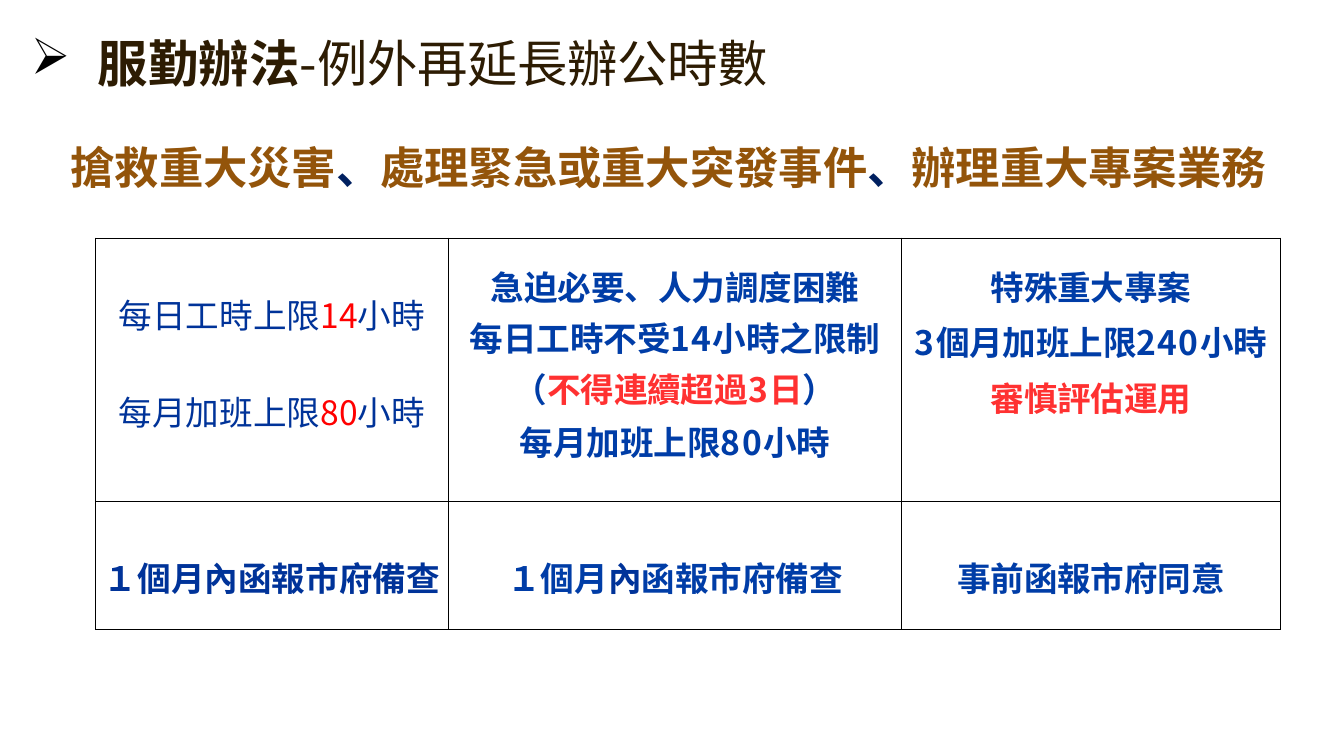
from typing import NamedTuple

from lxml.etree import SubElement
from pptx import Presentation
from pptx.dml.color import RGBColor
from pptx.enum.text import MSO_ANCHOR as Anchor, MSO_AUTO_SIZE as AutoSize, PP_ALIGN as Align
from pptx.oxml.ns import qn
from pptx.util import Inches, Pt

COLORS = {
    "brown": "93540A", "dark_brown": "2D1C03", "navy": "002060",
    "blue": "003399", "bright_blue": "003DA7",
    "red": "FF0000", "light_red": "FF3131", "black": "000000",
}
FONT_SC = "Noto Sans CJK SC"
FONT_TC = "Noto Sans CJK TC"
TABLE_SIZE = 36


class Piece(NamedTuple):
    text: str
    color: str
    spacing: float = 0  # points between characters
    bold: bool = True


class Line(NamedTuple):
    pieces: list[Piece]
    before: float = 0
    height: float | None = None  # exact line height in points


class CellText(NamedTuple):
    top: float  # top margin in inches
    lines: list[Line]


def fill_paragraph(paragraph, pieces: list[Piece], size: float, font_name: str) -> None:
    paragraph.font.size = Pt(size)
    paragraph.font.name = font_name
    for piece in pieces:
        run = paragraph.add_run()
        run.text = piece.text
        run.font.bold = piece.bold
        run.font.color.rgb = RGBColor.from_string(COLORS[piece.color])
        properties = run.font._element
        properties.set("spc", str(round(piece.spacing * 100)))
        SubElement(properties, qn("a:ea"), typeface=font_name)


def add_bullet(paragraph, character: str, indent: float) -> None:
    properties = paragraph._p.get_or_add_pPr()
    properties.set("marL", str(Inches(indent)))
    properties.set("indent", str(-Inches(1)))
    color = SubElement(properties, qn("a:buClr"))
    SubElement(color, qn("a:srgbClr"), val=COLORS["black"])
    SubElement(properties, qn("a:buChar"), char=character)
    tabs = SubElement(properties, qn("a:tabLst"))
    SubElement(tabs, qn("a:tab"), pos=str(Inches(indent)), algn="l")


def add_borders(cell) -> None:
    properties = cell._tc.get_or_add_tcPr()
    for position, side in enumerate(("lnL", "lnR", "lnT", "lnB")):
        line = SubElement(properties, qn(f"a:{side}"), w=str(Pt(1)))
        fill = SubElement(line, qn("a:solidFill"))
        SubElement(fill, qn("a:srgbClr"), val=COLORS["black"])
        properties.insert(position, line)


def fill_cell(cell, content: CellText) -> None:
    cell.fill.background()
    add_borders(cell)
    cell.margin_top = Inches(content.top)
    for index, line in enumerate(content.lines):
        frame = cell.text_frame
        paragraph = frame.add_paragraph() if index else frame.paragraphs[0]
        paragraph.alignment = Align.CENTER
        if line.before:
            paragraph.space_before = Pt(line.before)
        if line.height:
            paragraph.line_spacing = Pt(line.height)
        fill_paragraph(paragraph, line.pieces, TABLE_SIZE, FONT_SC)


def hour_limit(label: str, hours: str, before: float = 0) -> Line:
    return Line([Piece(label, "blue", bold=False), Piece(hours, "red", bold=False),
                 Piece("小時", "blue", bold=False)], before)


def blue(text: str, spacing: float = -0.1) -> Piece:
    return Piece(text, "bright_blue", spacing)


def red(text: str, spacing: float = -0.2) -> Piece:
    return Piece(text, "light_red", spacing)


ROWS = [
    [
        CellText(0.77, [hour_limit("每日工時上限", "14"),
                        hour_limit("每月加班上限", "80", before=52)]),
        CellText(0.56, [
            Line([blue("急迫必要、人力調度"), blue("困難", -0.3)], height=37),
            Line([blue("每日工時不受"), blue("14", 1.4), blue("小時", -0.3), blue("之限制")],
                 2.9, 51.8),
            Line([blue("（"), red("不得連續超"), red("過", -0.1), red("3", 1.4),
                  red("日", 0), blue("）", -0.5)], 2.9, 51.8),
            Line([blue("每月加班上限"), blue("80", 1.4), blue("小時", -0.3)], 4.3),
        ]),
        CellText(0.56, [
            Line([blue("特殊重大專案", -0.2)], height=37),
            Line([blue("3", 1.4), blue("個月加班上限", -0.2), blue("240", 1.4),
                  blue("小時", -0.3)], 7.3),
            Line([red("審慎評估運用")], 7.3),
        ]),
    ],
    [
        CellText(0.77, [Line([Piece("１個月內函報市府備查", "blue")])]),
        CellText(0.77, [Line([blue("１個月"), Piece("內", "blue"), blue("函報市府備查")])]),
        CellText(0.77, [Line([blue("事前函報市府同意", -0.2)])]),
    ],
]
COLUMN_WIDTHS = [5.25, 6.75, 5.63]
ROW_HEIGHTS = [3.92, 1.9]

presentation = Presentation()
presentation.slide_width = Inches(20)
presentation.slide_height = Inches(11.25)
slide = presentation.slides.add_slide(presentation.slide_layouts[5])

# Title: the three qualifying situations
title = slide.shapes.title
title.left, title.top = Inches(1.05), Inches(2.07)
title.width, title.height = Inches(17.91), Inches(0.82)
frame = title.text_frame
frame.margin_left = frame.margin_right = frame.margin_top = frame.margin_bottom = 0
frame.vertical_anchor = Anchor.MIDDLE
frame.auto_size = AutoSize.NONE
frame.word_wrap = True
frame.paragraphs[0].alignment = Align.LEFT
fill_paragraph(frame.paragraphs[0], [
    Piece("搶救重大災害", "brown", -0.1), Piece("、", "navy", -0.1),
    Piece("處理緊急或重大突發事件", "brown", -0.1), Piece("、", "navy", -0.1),
    Piece("辦理重大專案業務", "brown", -0.1),
], 47.5, FONT_SC)

# Table of limits and reporting duties
table_shape = slide.shapes.add_table(
    len(ROW_HEIGHTS), len(COLUMN_WIDTHS), Inches(1.42), Inches(3.54),
    Inches(sum(COLUMN_WIDTHS)), Inches(sum(ROW_HEIGHTS)))
table = table_shape.table
table.first_row = table.horz_banding = False
for column, width in zip(table.columns, COLUMN_WIDTHS):
    column.width = Inches(width)
for row, height, contents in zip(table.rows, ROW_HEIGHTS, ROWS):
    row.height = Inches(height)
    for cell, content in zip(row.cells, contents):
        fill_cell(cell, content)

# Section heading with an arrow bullet
heading = slide.shapes.add_textbox(Inches(0.33), Inches(0.43), Inches(11.62), Inches(1.01))
heading.text_frame.word_wrap = True
heading.text_frame.vertical_anchor = Anchor.MIDDLE
heading_paragraph = heading.text_frame.paragraphs[0]
add_bullet(heading_paragraph, "➢", 1.03)
fill_paragraph(heading_paragraph, [
    Piece("服勤辦法", "dark_brown"),
    Piece("-例外再延⾧辦公時數", "dark_brown", -0.4, bold=False),
], 54, FONT_TC)

presentation.save("out.pptx")
